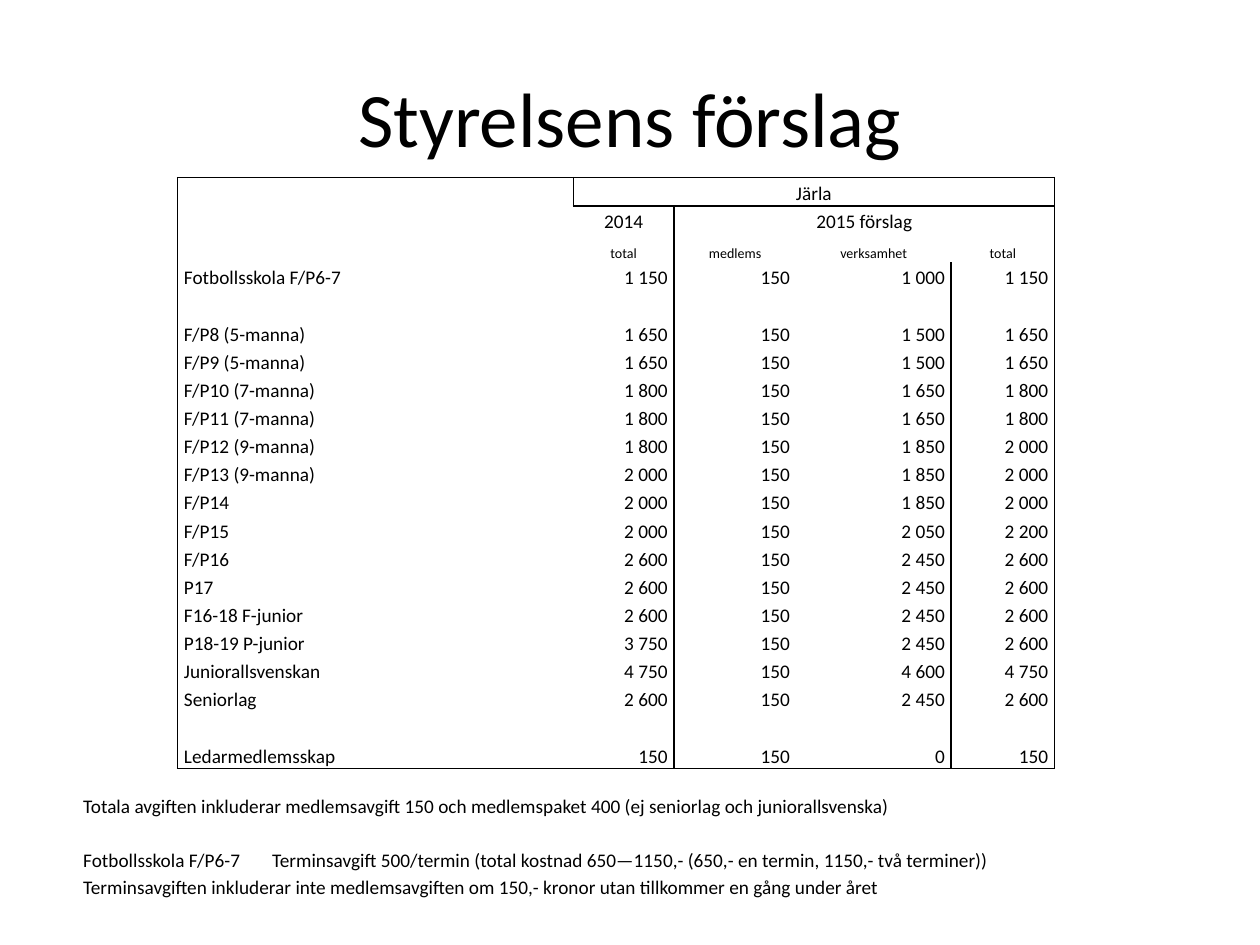
from lxml import etree
from pptx import Presentation
from pptx.dml.color import RGBColor
from pptx.enum import text
from pptx.oxml import ns
from pptx.util import Inches, Pt

COLORS = {"ink": "000000"}
FONT = "Calibri"
NO_STYLE = "{2D5ABB26-0587-4C30-8999-92F81FD0307C}"
LEFT, CENTER, RIGHT = text.PP_ALIGN.LEFT, text.PP_ALIGN.CENTER, text.PP_ALIGN.RIGHT

COLUMN_WIDTHS = [3.14, 0.8, 0.97, 1.23, 0.82]
SPANS = {(0, 1): 4, (1, 2): 3}
HEADINGS = [
    ["", "Järla", "", "", ""],
    ["", "2014", "2015 förslag", "", ""],
    ["", "total", "medlems", "verksamhet", "total"],
]
SUBHEADING_ROW = len(HEADINGS) - 1
MEMBER_FEE = 150
# Group, total 2014, activity fee 2015; None is an empty row
FEES = [
    ("Fotbollsskola F/P6-7", 1150, 1000),
    None,
    ("F/P8 (5-manna)", 1650, 1500),
    ("F/P9 (5-manna)", 1650, 1500),
    ("F/P10 (7-manna)", 1800, 1650),
    ("F/P11 (7-manna)", 1800, 1650),
    ("F/P12 (9-manna)", 1800, 1850),
    ("F/P13 (9-manna)", 2000, 1850),
    ("F/P14", 2000, 1850),
    ("F/P15", 2000, 2050),
    ("F/P16", 2600, 2450),
    ("P17", 2600, 2450),
    ("F16-18 F-junior", 2600, 2450),
    ("P18-19 P-junior", 3750, 2450),
    ("Juniorallsvenskan", 4750, 4600),
    ("Seniorlag", 2600, 2450),
    None,
    ("Ledarmedlemsskap", 150, 0),
]
NOTES = [
    "Totala avgiften inkluderar medlemsavgift 150 och medlemspaket 400 "
    "(ej seniorlag och juniorallsvenska)",
    "Fotbollsskola F/P6-7\tTerminsavgift 500/termin (total kostnad 650—1150,- "
    "(650,- en termin, 1150,- två terminer))",
    "Terminsavgiften inkluderar inte medlemsavgiften om 150,- kronor utan "
    "tillkommer en gång under året",
]


def place(shape, left, top, width, height):
    shape.left, shape.top, shape.width, shape.height = left, top, width, height


def style(para, size, align):
    para.alignment = align
    para.font.name = FONT
    para.font.size = Pt(size)
    para.font.color.rgb = RGBColor.from_string(COLORS["ink"])


def add_title(page, *box):
    title = page.shapes.title
    place(title, *box)
    title.text_frame.text = "Styrelsens förslag"
    title.text_frame.vertical_anchor = text.MSO_ANCHOR.MIDDLE
    style(title.text_frame.paragraphs[0], 44, CENTER)


def add_notes(page, *box):
    body = page.placeholders[1]
    place(body, *box)
    frame = body.text_frame
    frame.text = "\n".join(NOTES)
    frame.word_wrap = True
    frame.auto_size = text.MSO_AUTO_SIZE.NONE
    frame.margin_left = Inches(0.19)
    for para in frame.paragraphs:
        props = para._p.get_or_add_pPr()
        props.set("marL", "0")
        props.set("indent", "0")
        etree.SubElement(props, ns.qn("a:buNone"))
        if "\t" in para.text:
            tabs = etree.SubElement(props, ns.qn("a:tabLst"))
            etree.SubElement(tabs, ns.qn("a:tab"), pos=str(Inches(1.35)), algn="l")
        style(para, 11, LEFT)
    frame.paragraphs[0].space_before = Pt(0)
    frame.paragraphs[1].space_before = Pt(18)


def fee_cells(fee):
    if fee is None:
        return [""] * len(COLUMN_WIDTHS)
    group, before, activity = fee
    amounts = [before, MEMBER_FEE, activity, MEMBER_FEE + activity]
    return [group] + [f"{amount:,}".replace(",", " ") for amount in amounts]


def has_vertical(row, edge):
    """Tell whether a rule runs along this column edge in this row."""
    first_ruled_row = {0: 0, 2: 1, 4: len(HEADINGS), len(COLUMN_WIDTHS): 0}
    return (row, edge) == (0, 1) or row >= first_ruled_row.get(edge, row + 1)


def has_horizontal(edge, column, row_count):
    return edge in (0, row_count) or (edge == 1 and column >= 1)


def draw_borders(cell, sides):
    """Add borders for (L, R, T, B) ahead of the cell's fill."""
    props = cell._tc.get_or_add_tcPr()
    for index, (side, ruled) in enumerate(zip("LRTB", sides)):
        line = etree.Element(ns.qn(f"a:ln{side}"), w=str(Pt(1)))
        if ruled:
            fill = etree.SubElement(line, ns.qn("a:solidFill"))
            etree.SubElement(fill, ns.qn("a:srgbClr"), val=COLORS["ink"])
        else:
            etree.SubElement(line, ns.qn("a:noFill"))
        props.insert(index, line)


def fill_cell(cell, words, size, align):
    cell.text = words
    cell.fill.background()
    cell.vertical_anchor = text.MSO_ANCHOR.BOTTOM
    cell.margin_left = cell.margin_right = Inches(0.05)
    cell.margin_top = cell.margin_bottom = 0
    para = cell.text_frame.paragraphs[0]
    para.line_spacing = 1.15
    style(para, size, align)
    if not words:  # keeps empty rows from growing
        etree.SubElement(para._p, ns.qn("a:endParaRPr"), sz=str(size * 100))


def add_fee_table(page, left, top, width, height):
    rows = HEADINGS + [fee_cells(fee) for fee in FEES]
    count = len(rows)
    table = page.shapes.add_table(
        count, len(COLUMN_WIDTHS), left, top, width, height).table
    table.first_row = table.horz_banding = False
    table._tbl.tblPr.find(ns.qn("a:tableStyleId")).text = NO_STYLE
    for column, column_width in zip(table.columns, COLUMN_WIDTHS):
        column.width = Inches(column_width)
    for row in table.rows:
        row.height = height // count

    for r, words in enumerate(rows):
        for c, word in enumerate(words):
            cell = table.cell(r, c)
            heading = r < len(HEADINGS)
            align = LEFT if c == 0 else CENTER if heading else RIGHT
            fill_cell(cell, word, 8 if r == SUBHEADING_ROW and c else 11, align)
            span = SPANS.get((r, c), 1)
            draw_borders(cell, (
                has_vertical(r, c), has_vertical(r, c + span),
                has_horizontal(r, c, count), has_horizontal(r + 1, c, count)))
    for (r, c), span in SPANS.items():
        table.cell(r, c).merge(table.cell(r, c + span - 1))


def main():
    deck = Presentation()
    deck.slide_width, deck.slide_height = Inches(10), Inches(7.5)
    page = deck.slides.add_slide(deck.slide_layouts[1])
    add_title(page, Inches(0.5), Inches(0.3), Inches(9), Inches(1.25))
    add_notes(page, Inches(0.47), Inches(6.25), Inches(8.83), Inches(1.02))
    add_fee_table(page, Inches(1.41), Inches(1.41), Inches(6.96), Inches(4.69))
    deck.save("out.pptx")


if __name__ == "__main__":
    main()
